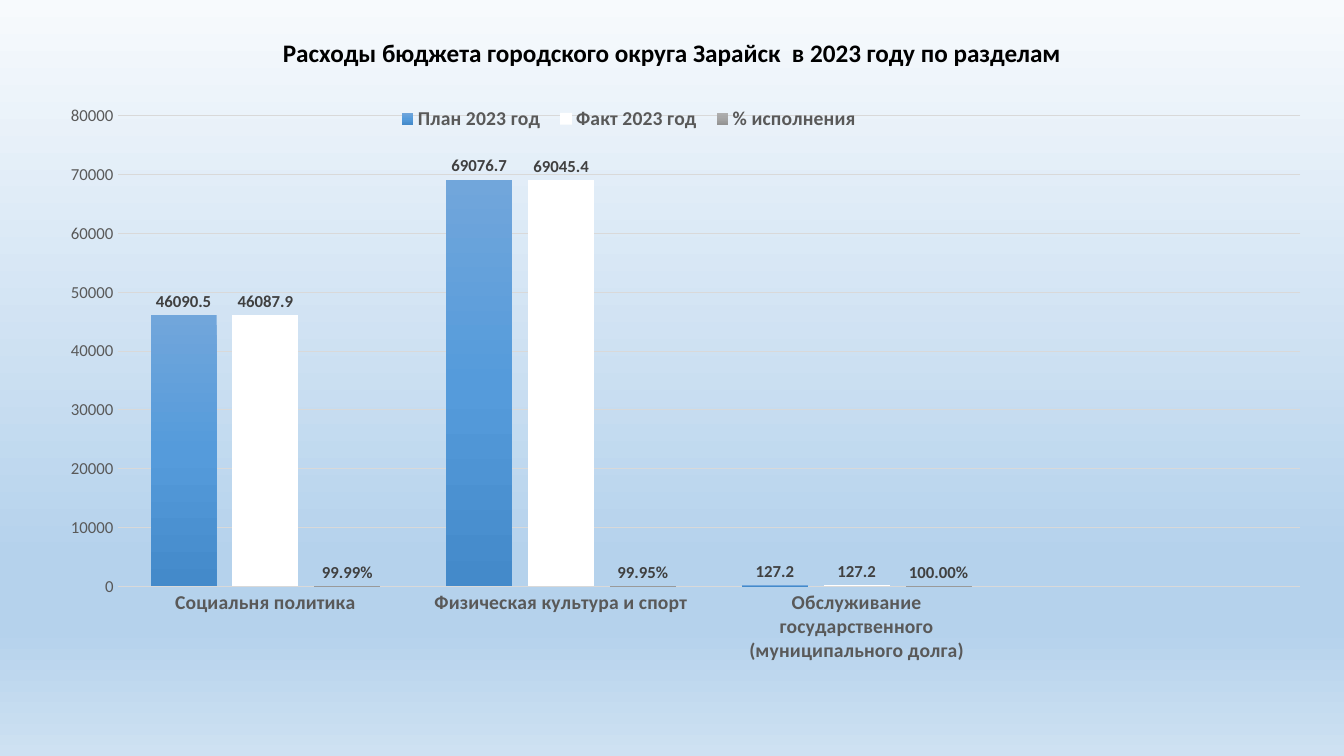
from copy import deepcopy
from dataclasses import dataclass

from lxml import etree
from pptx import Presentation
from pptx.chart.data import CategoryChartData
from pptx.dml.color import RGBColor
from pptx.dml.fill import FillFormat
from pptx.enum import chart as kinds
from pptx.enum import text
from pptx.oxml import parse_xml
from pptx.oxml.ns import nsdecls, qn
from pptx.text.text import Font
from pptx import util as u

PX = 9525
FONT = "Calibri"
BLACK = RGBColor(0x00, 0x00, 0x00)
WHITE = RGBColor(0xFF, 0xFF, 0xFF)
DARK_GREY = RGBColor(0x40, 0x40, 0x40)
GREY = RGBColor(0x59, 0x59, 0x59)
LIGHT_GREY = RGBColor(0xD9, 0xD9, 0xD9)
PALE_BLUE = RGBColor(0xB5, 0xD2, 0xEC)

Stops = list[tuple[int, RGBColor]]

BACKGROUND: Stops = [(0, RGBColor(0xF7, 0xFA, 0xFD)), (74, PALE_BLUE),
                     (83, PALE_BLUE), (100, RGBColor(0xCE, 0xE1, 0xF2))]
BLUE_BARS: Stops = [(0, RGBColor(0x71, 0xA6, 0xDB)), (50, RGBColor(0x55, 0x9B, 0xDB)),
                    (100, RGBColor(0x44, 0x8A, 0xCA))]
GREY_BARS: Stops = [(0, RGBColor(0xAF, 0xAF, 0xAF)), (50, RGBColor(0xA5, 0xA5, 0xA5)),
                    (100, RGBColor(0x93, 0x93, 0x93))]


@dataclass
class Measure:
    name: str
    values: list[float | None]
    paint: Stops | RGBColor
    number_format: str = "General"


# The empty fourth category keeps the free space at the right.
SECTIONS = ["Социальня политика", "Физическая культура и спорт",
            "Обслуживание государственного (муниципального долга)", ""]
MEASURES = [
    Measure("План 2023 год", [46090.5, 69076.7, 127.2, None], BLUE_BARS),
    Measure("Факт 2023 год", [46087.9, 69045.4, 127.2, None], WHITE),
    Measure("% исполнения", [0.9999, 0.9995, 1, None], GREY_BARS, "0.00%"),
]


def set_all(target: object, values: dict[str, object]) -> None:
    for name, value in values.items():
        setattr(target, name, value)


def style_font(font: Font, size: int, color: RGBColor, bold: bool) -> None:
    set_all(font, {"name": FONT, "size": u.Pt(size), "bold": bold})
    font.color.rgb = color


def paint_down(fill: FillFormat, owner: etree._Element, stops: Stops) -> None:
    """Fill with a top-to-bottom gradient; owner is the element that holds the fill."""
    fill.gradient()
    fill.gradient_angle = 270
    stop_list = next(owner.iter(qn("a:gsLst")))
    while len(stop_list) < len(stops):
        stop_list.append(deepcopy(stop_list[0]))
    for stop, (percent, color) in zip(fill.gradient_stops, stops):
        stop.position = percent / 100
        stop.color.rgb = color


def manual_layout(x: float, y: float, width: float, height: float,
                  target: str = "") -> etree._Element:
    """Chart layout in fractions of the chart's size."""
    inner = f'<c:layoutTarget val="{target}"/>' if target else ""
    return parse_xml(
        f'<c:layout {nsdecls("c")}><c:manualLayout>{inner}'
        '<c:xMode val="edge"/><c:yMode val="edge"/>'
        f'<c:x val="{x}"/><c:y val="{y}"/><c:w val="{width}"/><c:h val="{height}"/>'
        '</c:manualLayout></c:layout>')


def add_spending_chart(page) -> None:
    data = CategoryChartData()
    data.categories = SECTIONS
    for measure in MEASURES:
        data.add_series(measure.name, measure.values, measure.number_format)
    frame = page.shapes.add_chart(kinds.XL_CHART_TYPE.COLUMN_CLUSTERED,
                                  65 * PX, 88 * PX, 1174 * PX, 560 * PX, data)
    chart = frame.chart
    set_all(chart, {"has_title": False, "has_legend": True})
    style_font(chart.font, 10, BLACK, False)

    set_all(chart.legend, {"position": kinds.XL_LEGEND_POSITION.BOTTOM,
                           "include_in_layout": False})
    style_font(chart.legend.font, 14, GREY, True)
    legend_position = next(chart.element.iter(qn("c:legendPos")))
    legend_position.addnext(manual_layout(0.26, 0.02, 0.39, 0.05))

    plot_area = next(chart.element.iter(qn("c:plotArea")))
    for layout in plot_area.findall(qn("c:layout")):
        plot_area.remove(layout)
    plot_area.insert(0, manual_layout(0.04, 0.04, 0.96, 0.8, "inner"))

    category_axis, value_axis = chart.category_axis, chart.value_axis
    for axis in (category_axis, value_axis):
        set_all(axis, {"major_tick_mark": kinds.XL_TICK_MARK.NONE,
                       "minor_tick_mark": kinds.XL_TICK_MARK.NONE})
    style_font(category_axis.tick_labels.font, 14, GREY, True)
    style_font(value_axis.tick_labels.font, 12, GREY, False)
    set_all(value_axis.tick_labels, {"number_format": "General",
                                     "number_format_is_linked": False})
    set_all(value_axis, {"minimum_scale": 0, "maximum_scale": 80000,
                         "major_unit": 10000, "has_major_gridlines": True})
    value_axis.format.line.fill.background()
    for line, width in ((category_axis.format.line, 1),
                        (value_axis.major_gridlines.format.line, 0.75)):
        line.width = u.Pt(width)
        line.color.rgb = LIGHT_GREY

    plot = chart.plots[0]
    set_all(plot, {"gap_width": 100, "overlap": -24, "vary_by_categories": False})
    for measure, series, owner in zip(MEASURES, plot.series,
                                      chart.element.iter(qn("c:ser"))):
        fill = series.format.fill
        if isinstance(measure.paint, RGBColor):
            fill.solid()
            fill.fore_color.rgb = measure.paint
        else:
            paint_down(fill, owner, measure.paint)
        labels = series.data_labels
        set_all(labels, {"show_value": True,
                         "position": kinds.XL_LABEL_POSITION.OUTSIDE_END,
                         "number_format": measure.number_format,
                         "number_format_is_linked": False})
        style_font(labels.font, 12, DARK_GREY, True)


def add_title(page) -> None:
    title = page.shapes.title
    set_all(title, {"left": 88 * PX, "top": 16 * PX,
                    "width": 1104 * PX, "height": 72 * PX})
    title.text_frame.vertical_anchor = text.MSO_ANCHOR.MIDDLE
    para = title.text_frame.paragraphs[0]
    set_all(para, {"alignment": text.PP_ALIGN.CENTER, "line_spacing": 0.9})
    span = para.add_run()
    span.text = "Расходы бюджета городского округа Зарайск  в 2023 году по разделам"
    style_font(span.font, 18, BLACK, True)


def main() -> None:
    deck = Presentation()
    set_all(deck, {"slide_width": 1280 * PX, "slide_height": 720 * PX})
    page = deck.slides.add_slide(deck.slide_layouts.get_by_name("Title Only"))
    paint_down(page.background.fill, page.element, BACKGROUND)
    add_title(page)
    add_spending_chart(page)
    deck.save("out.pptx")


if __name__ == "__main__":
    main()
